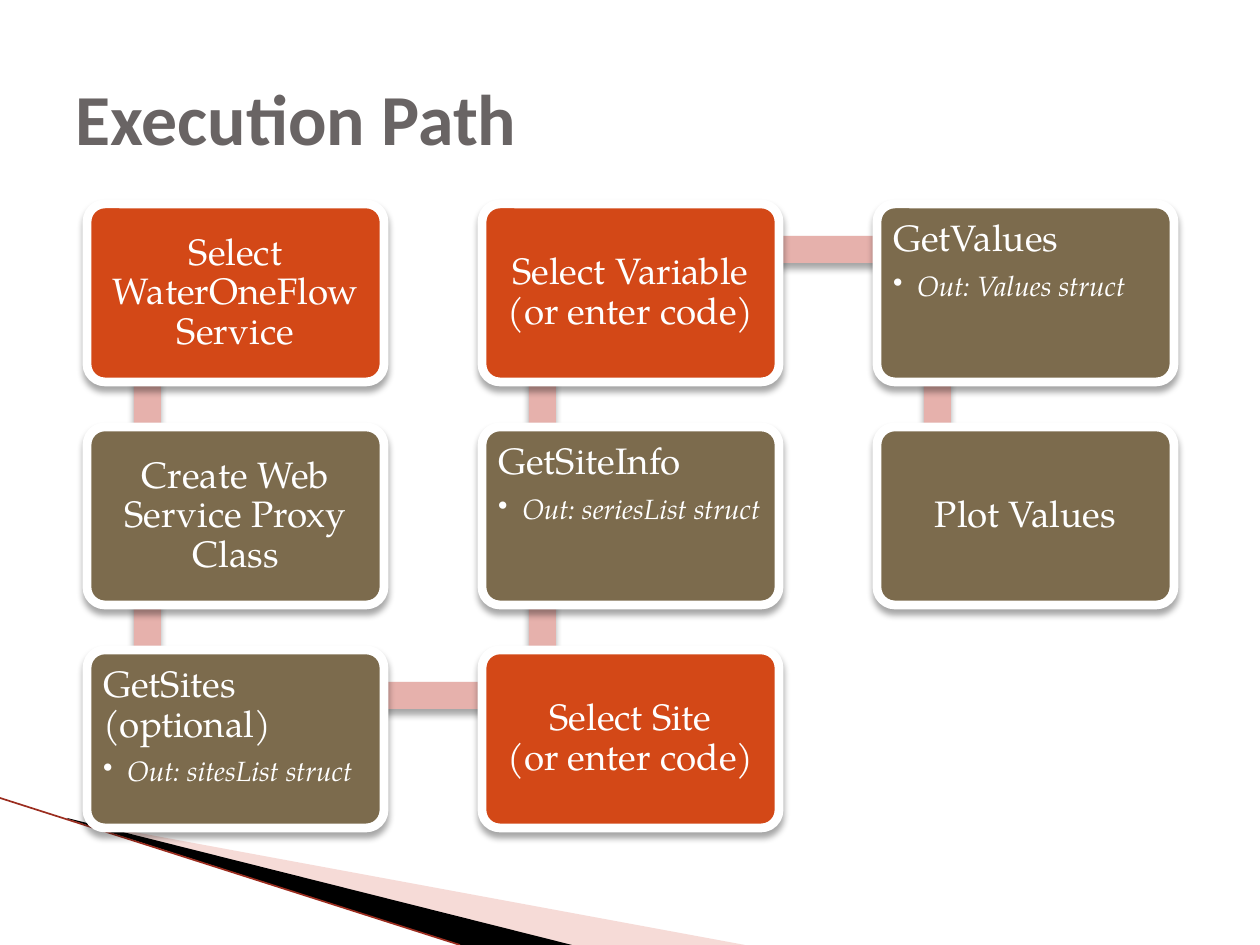
"""Build the Execution Path slide: a snaking flow of eight steps."""
from dataclasses import dataclass

from lxml import etree
from pptx import Presentation
from pptx import util as u
from pptx.dml.color import RGBColor
from pptx.enum import shapes, text
from pptx.oxml import ns

PX = 914400 / 126


@dataclass(frozen=True)
class Theme:
    heading_font: str = "Calibri"
    body_font: str = "TeX Gyre Pagella"
    heading: str = "696464"
    user_step: str = "D34817"
    code_step: str = "7C6B4D"
    link: str = "E6B1AC"
    light: str = "FFFFFF"
    dark: str = "000000"
    wedge: str = "E9A59D"
    edge: str = "9B2D1F"
    heading_size: int = 41
    step_size: int = 21
    detail_size: int = 16


@dataclass(frozen=True)
class Grid:
    left: int = 87
    top: int = 204
    column_pitch: int = 395
    row_pitch: int = 223
    box_width: int = 297
    box_height: int = 178
    link_x: int = 60
    link_y: int = 45
    link_width: int = 27


@dataclass(frozen=True)
class Step:
    column: int
    row: int
    label: str
    color: str
    detail: str = ""


@dataclass(frozen=True)
class Wedge:
    points: tuple
    color: str
    opacity: int = 100


THEME = Theme()
GRID = Grid()
STEPS = (
    Step(0, 0, "Select WaterOneFlow Service", THEME.user_step),
    Step(0, 1, "Create Web Service Proxy Class", THEME.code_step),
    Step(0, 2, "GetSites\n(optional)", THEME.code_step, "Out: sitesList struct"),
    Step(1, 2, "Select Site\n(or enter code)", THEME.user_step),
    Step(1, 1, "GetSiteInfo", THEME.code_step, "Out: seriesList struct"),
    Step(1, 0, "Select Variable\n(or enter code)", THEME.user_step),
    Step(2, 0, "GetValues", THEME.code_step, "Out: Values struct"),
    Step(2, 1, "Plot Values", THEME.code_step),
)
WEDGES = (
    Wedge(((69, 820), (745, 945), (570, 945), (69, 819)), THEME.wedge, 40),
    Wedge(((67, 818), (572, 945), (460, 945), (68, 819)), THEME.dark),
)


def px(length: int) -> u.Emu:
    return u.Emu(round(length * PX))


def rgb(color: str) -> RGBColor:
    return RGBColor.from_string(color)


def add_child(parent, tag: str, **attributes: str):
    child = etree.SubElement(parent, ns.qn(tag))
    for name, value in attributes.items():
        child.set(name, value)
    return child


def add_shadow(shape) -> None:
    shape.shadow.inherit = False
    effects = shape._element.spPr.find(ns.qn("a:effectLst"))
    shadow = add_child(effects, "a:outerShdw", blurRad=str(u.Pt(4)), dist=str(u.Pt(3)),
                       dir="5400000", rotWithShape="0")
    add_child(add_child(shadow, "a:srgbClr", val=THEME.dark), "a:alpha", val="35000")


def add_block(slide, kind, left: int, top: int, width: int, height: int, color: str):
    block = slide.shapes.add_shape(kind, px(left), px(top), px(width), px(height))
    block.fill.solid()
    block.fill.fore_color.rgb = rgb(color)
    block.line.fill.background()
    add_shadow(block)
    return block


def add_wedge(slide, wedge: Wedge) -> None:
    builder = slide.shapes.build_freeform(*wedge.points[0], scale=PX)
    builder.add_line_segments(wedge.points[1:], close=True)
    shape = builder.convert_to_shape()
    shape.shadow.inherit = False
    shape.line.fill.background()
    shape.fill.solid()
    shape.fill.fore_color.rgb = rgb(wedge.color)
    if wedge.opacity < 100:
        color = shape._element.spPr.find(".//" + ns.qn("a:srgbClr"))
        add_child(color, "a:alpha", val=str(wedge.opacity * 1000))


def add_edge(slide) -> None:
    edge = slide.shapes.add_connector(shapes.MSO_CONNECTOR.STRAIGHT,
                                      px(0), px(798), px(460), px(945))
    edge.line.color.rgb = rgb(THEME.edge)
    edge.line.width = u.Pt(0.95)
    add_child(edge._element.spPr, "a:effectLst")


def corner(step: Step) -> tuple[int, int]:
    return (GRID.left + step.column * GRID.column_pitch,
            GRID.top + step.row * GRID.row_pitch)


def add_link(slide, start: Step, end: Step) -> None:
    (x1, y1), (x2, y2) = corner(start), corner(end)
    left, top = min(x1, x2) + GRID.link_x, min(y1, y2) + GRID.link_y
    width, height = abs(x2 - x1), abs(y2 - y1)
    if width:
        top, height = top - GRID.link_width // 2, GRID.link_width
    else:
        left, width = left - GRID.link_width // 2, GRID.link_width
    add_block(slide, shapes.MSO_SHAPE.RECTANGLE, left, top, width, height, THEME.link)


def format_para(para, size: int, after: int, align) -> None:
    para.alignment = align
    para.line_spacing = 0.9
    para.space_after = u.Pt(after)
    para.font.size = u.Pt(size)
    para.font.name = THEME.body_font
    para.font.color.rgb = rgb(THEME.light)


def add_step(slide, step: Step) -> None:
    box = add_block(slide, shapes.MSO_SHAPE.ROUNDED_RECTANGLE, *corner(step),
                    GRID.box_width, GRID.box_height, step.color)
    box.adjustments[0] = 0.1
    box.line.color.rgb = rgb(THEME.light)
    box.line.width = u.Pt(5)
    frame = box.text_frame
    frame.word_wrap = True
    frame.margin_left = frame.margin_right = px(11)
    frame.margin_top = frame.margin_bottom = px(11)
    frame.vertical_anchor = text.MSO_ANCHOR.TOP if step.detail else text.MSO_ANCHOR.MIDDLE
    align = text.PP_ALIGN.LEFT if step.detail else text.PP_ALIGN.CENTER
    para = frame.paragraphs[0]
    para.text = step.label
    format_para(para, THEME.step_size, 7, align)
    if step.detail:
        para = frame.add_paragraph()
        para.text = step.detail
        para.level = 1
        properties = para._p.get_or_add_pPr()
        properties.set("marL", str(px(24)))
        properties.set("indent", str(-px(24)))
        add_child(properties, "a:buChar", char="•")
        format_para(para, THEME.detail_size, 3, align)
        para.font.italic = True


def add_title(slide, wording: str) -> None:
    title = slide.shapes.title
    title.left, title.top, title.width, title.height = px(63), px(38), px(1134), px(158)
    title.text_frame.vertical_anchor = text.MSO_ANCHOR.MIDDLE
    para = title.text_frame.paragraphs[0]
    para.text = wording
    para.alignment = text.PP_ALIGN.LEFT
    para.font.name = THEME.heading_font
    para.font.size = u.Pt(THEME.heading_size)
    para.font.bold = True
    para.font.color.rgb = rgb(THEME.heading)


def main() -> None:
    deck = Presentation()
    deck.slide_width, deck.slide_height = px(1260), px(945)
    slide = deck.slides.add_slide(deck.slide_layouts[5])
    for wedge in WEDGES:
        add_wedge(slide, wedge)
    add_edge(slide)
    for step, following in zip(STEPS, STEPS[1:] + (None,)):
        if following:
            add_link(slide, step, following)
        add_step(slide, step)
    add_title(slide, "Execution Path")
    deck.save("out.pptx")


if __name__ == "__main__":
    main()
